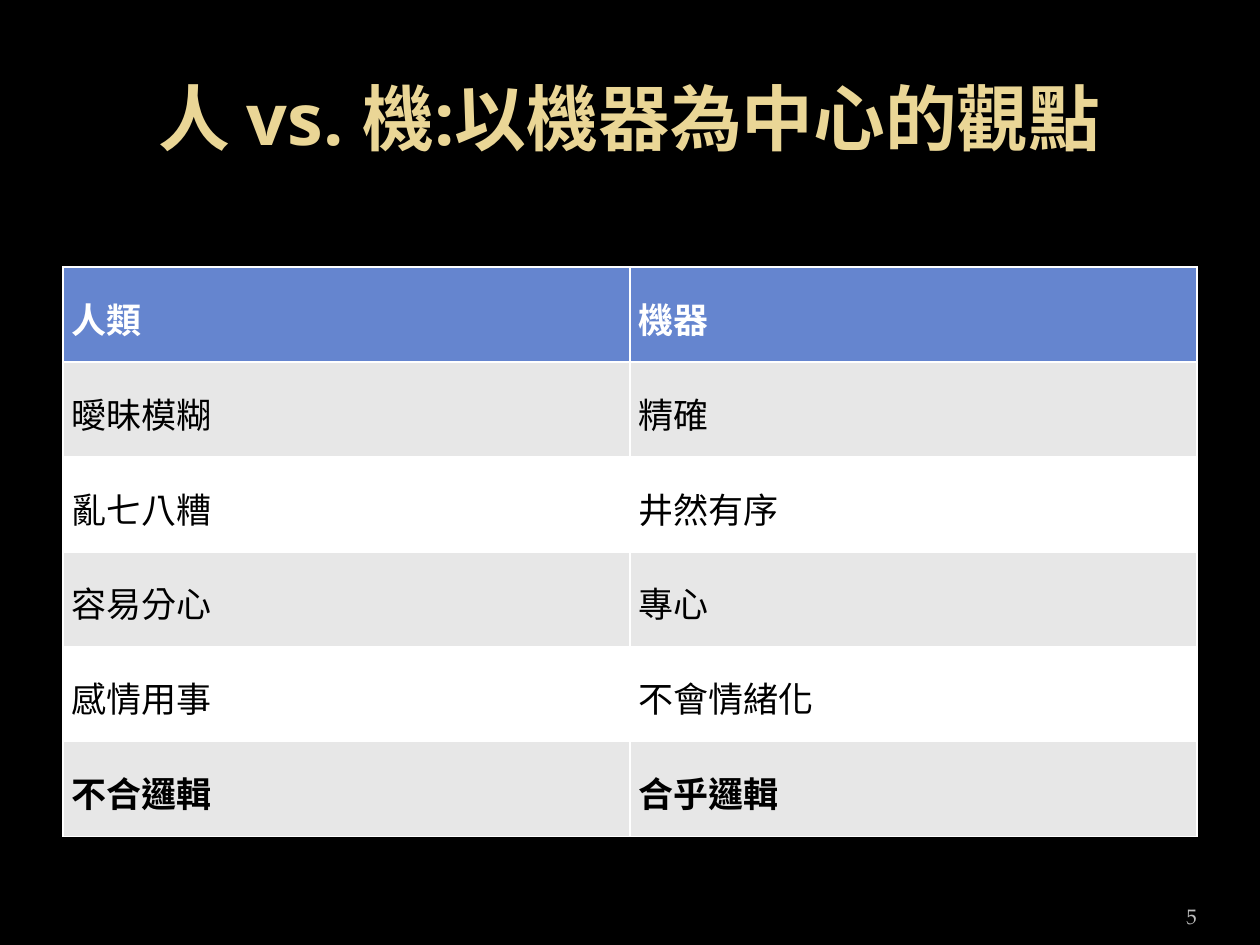
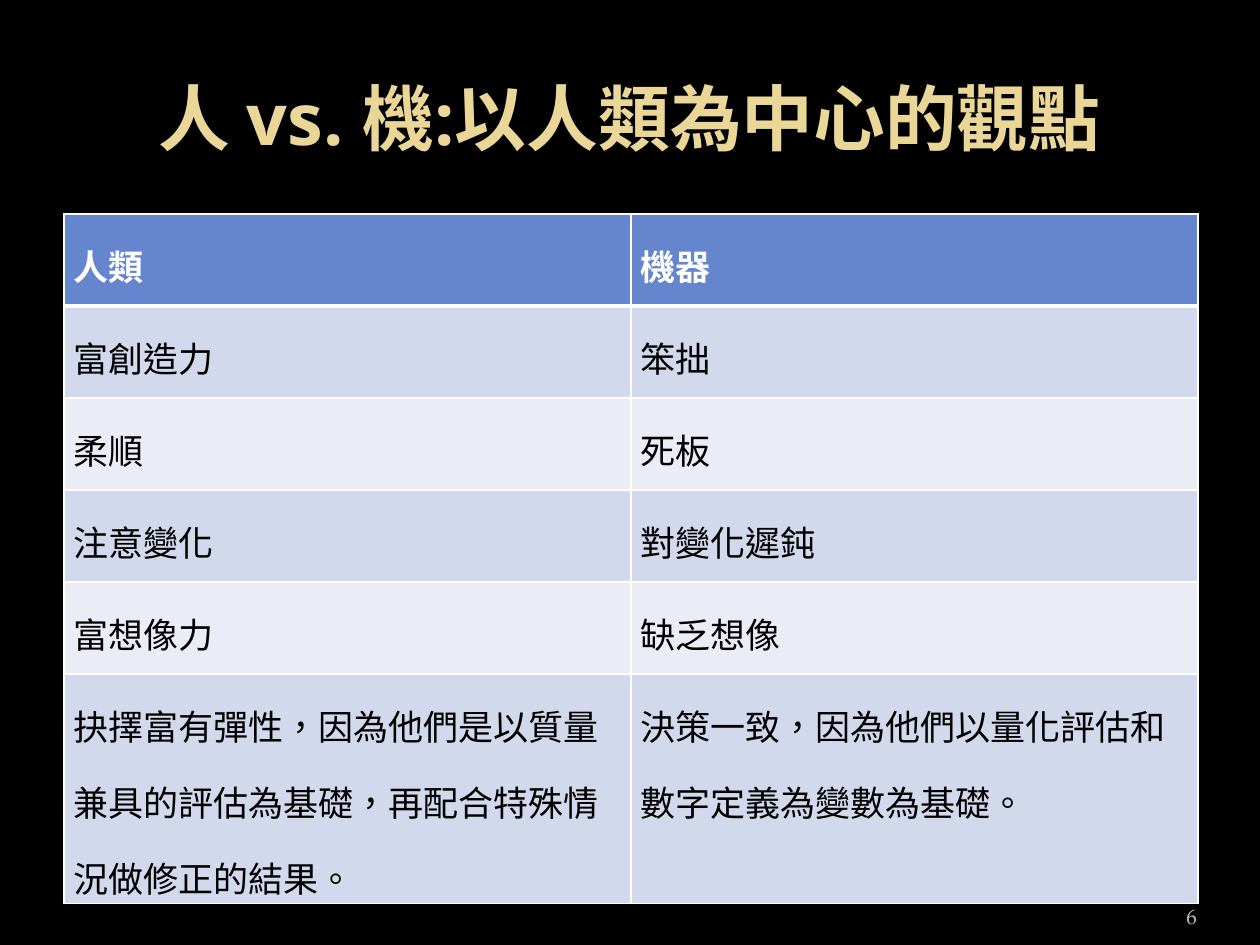
"""Build two slides that compare people and machines from two points of view."""
from lxml import etree
from pptx import Presentation
from pptx import util as u
from pptx.dml.color import RGBColor
from pptx.enum import text
from pptx.oxml.ns import qn

SLIDES = [
    {
        "title": "人 vs. 機:以機器為中心的觀點",
        "rows": [
            ("人類", "機器"),
            ("曖昧模糊", "精確"),
            ("亂七八糟", "井然有序"),
            ("容易分心", "專心"),
            ("感情用事", "不會情緒化"),
            ("不合邏輯", "合乎邏輯"),
        ],
        "at": (0.5, 2.12),
        "heights": [4.52 / 6] * 6,
        "bands": ("E7E7E7", "FFFFFF"),
        "bold_rows": (0, 5),
        "header_rule": 1,
        "number": "5",
    },
    {
        "title": "人 vs. 機:以人類為中心的觀點",
        "rows": [
            ("人類", "機器"),
            ("富創造力", "笨拙"),
            ("柔順", "死板"),
            ("注意變化", "對變化遲鈍"),
            ("富想像力", "缺乏想像"),
            ("抉擇富有彈性，因為他們是以質量兼具的評估為基礎，再配合特殊情況做修正的結果。",
             "決策一致，因為他們以量化評估和數字定義為變數為基礎。"),
        ],
        "at": (0.51, 1.7),
        "heights": [0.73] * 5 + [1.82],
        "bands": ("D3D9ED", "EAEDF6"),
        "bold_rows": (0,),
        "header_rule": 3,
        "number": "6",
    },
]
BACKGROUND, HEADER, WHITE, BLACK = "000000", "6585CF", "FFFFFF", "000000"
GOLD, DARK_GOLD, GREY = "EAD696", "E7D081", "BDBDBD"
TITLE_FONT, BODY_FONT = "Open Sans", "TeX Gyre Pagella"
COLUMN_WIDTH = 4.5


def color(hex_string):
    return RGBColor.from_string(hex_string)


def fill_solid(fill, hex_string):
    fill.solid()
    fill.fore_color.rgb = color(hex_string)


def add_run(paragraph, words, font_name, size, hex_string, bold=False):
    run = paragraph.add_run()
    run.text = words
    run.font.name, run.font.size, run.font.bold = font_name, u.Pt(size), bold
    fill_solid(run.font.fill, hex_string)
    run._r.get_or_add_rPr().set("lang", "zh-TW")
    return run


def add_text_box(slide, box, anchor, alignment, side_margin):
    frame = slide.shapes.add_textbox(*map(u.Inches, box)).text_frame
    frame.word_wrap = True
    frame.vertical_anchor = anchor
    frame.margin_left = frame.margin_right = u.Inches(side_margin)
    paragraph = frame.paragraphs[0]
    paragraph.alignment = alignment
    return paragraph


def add_title(slide, words):
    paragraph = add_text_box(slide, (0.5, 0.3, 9, 1.25), text.MSO_ANCHOR.MIDDLE,
                             text.PP_ALIGN.CENTER, 0.1)
    fill = add_run(paragraph, words, TITLE_FONT, 41, GOLD, True).font.fill
    fill.gradient()
    fill.gradient_angle = 280
    for stop, (position, shade) in zip(fill.gradient_stops, ((0.73, GOLD), (1, DARK_GOLD))):
        stop.position = position
        stop.color.rgb = color(shade)


def add_page_number(slide, number):
    paragraph = add_text_box(slide, (8.67, 7.02, 0.83, 0.4), text.MSO_ANCHOR.BOTTOM,
                             text.PP_ALIGN.RIGHT, 0)
    add_run(paragraph, number, BODY_FONT, 12, GREY)


def set_borders(cell, top, bottom):
    properties = cell._tc.get_or_add_tcPr()
    sides = (("lnL", 1), ("lnR", 1), ("lnT", top), ("lnB", bottom))
    for index, (side, width) in enumerate(sides):
        line = etree.Element(qn("a:" + side), w=str(u.Pt(width)))
        solid = etree.SubElement(line, qn("a:solidFill"))
        etree.SubElement(solid, qn("a:srgbClr"), val=WHITE)
        properties.insert(index, line)


def add_comparison(slide, content):
    rows, heights = content["rows"], content["heights"]
    left, top = content["at"]
    table = slide.shapes.add_table(
        len(rows), 2, u.Inches(left), u.Inches(top),
        u.Inches(2 * COLUMN_WIDTH), u.Inches(sum(heights))).table
    table.first_row = table.horz_banding = False
    for column in table.columns:
        column.width = u.Inches(COLUMN_WIDTH)
    for row_index, (row, height) in enumerate(zip(rows, heights)):
        table.rows[row_index].height = u.Inches(height)
        is_header = row_index == 0
        band = HEADER if is_header else content["bands"][(row_index - 1) % 2]
        for column_index, words in enumerate(row):
            cell = table.cell(row_index, column_index)
            cell.margin_left = cell.margin_right = u.Inches(0.07)
            cell.margin_top = cell.margin_bottom = 0
            fill_solid(cell.fill, band)
            set_borders(cell, content["header_rule"] if row_index == 1 else 1,
                        content["header_rule"] if is_header else 1)
            paragraph = cell.text_frame.paragraphs[0]
            paragraph.line_spacing = 1.5
            add_run(paragraph, words, BODY_FONT, 20, WHITE if is_header else BLACK,
                    row_index in content["bold_rows"])


def main():
    presentation = Presentation()
    presentation.slide_width, presentation.slide_height = u.Inches(10), u.Inches(7.5)
    for content in SLIDES:
        slide = presentation.slides.add_slide(presentation.slide_layouts[6])
        fill_solid(slide.background.fill, BACKGROUND)
        add_title(slide, content["title"])
        add_comparison(slide, content)
        add_page_number(slide, content["number"])
    presentation.save("out.pptx")


if __name__ == "__main__":
    main()
